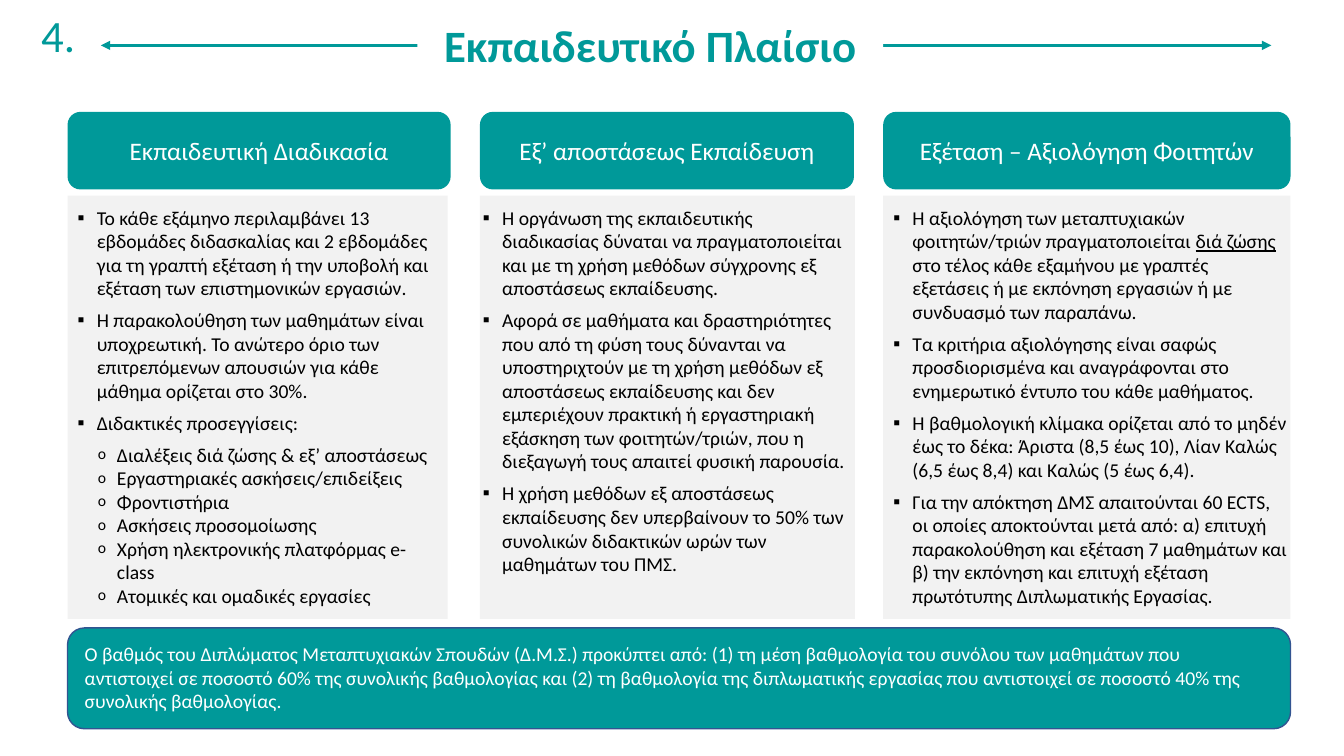
from dataclasses import dataclass

from lxml import etree
from pptx import Presentation
from pptx import util as u
from pptx.dml.color import RGBColor
from pptx.enum import shapes, text
from pptx.oxml import ns


@dataclass(frozen=True)
class Theme:
    font: str = "Calibri"
    teal: str = "009999"
    navy: str = "325491"
    panel: str = "F2F2F2"
    white: str = "FFFFFF"
    black: str = "000000"
    title: int = 32
    header: int = 18
    body: int = 14


THEME = Theme()
HANG = 0.19
PANEL_TOP, PANEL_HEIGHT = 1.94, 4.2
LIST_TOP = 1.99

COLUMNS = [
    dict(
        header="Εκπαιδευτική Διαδικασία",
        left=0.67, header_width=3.8, panel_width=3.77,
        list_left=0.67, list_width=3.69, list_height=4.12,
        points=[
            "Το κάθε εξάμηνο περιλαμβάνει 13 εβδομάδες διδασκαλίας και 2 εβδομάδες για τη γραπτή εξέταση ή την υποβολή και εξέταση των επιστημονικών εργασιών.",
            "Η παρακολούθηση των μαθημάτων είναι υποχρεωτική. Το ανώτερο όριο των επιτρεπόμενων απουσιών για κάθε μάθημα ορίζεται στο 30%.",
            "Διδακτικές προσεγγίσεις:",
        ],
        subpoints=[
            "Διαλέξεις διά ζώσης & εξ’ αποστάσεως",
            "Εργαστηριακές ασκήσεις/επιδείξεις",
            "Φροντιστήρια",
            "Ασκήσεις προσομοίωσης",
            "Χρήση ηλεκτρονικής πλατφόρμας e-class",
            "Ατομικές και ομαδικές εργασίες",
        ],
    ),
    dict(
        header="Εξ’ αποστάσεως Εκπαίδευση",
        left=4.76, header_width=3.71, panel_width=3.72,
        list_left=4.69, list_width=3.85, list_height=3.8,
        points=[
            "Η οργάνωση της εκπαιδευτικής διαδικασίας δύναται να πραγματοποιείται και με τη χρήση μεθόδων σύγχρονης εξ αποστάσεως εκπαίδευσης.",
            "Αφορά σε μαθήματα και δραστηριότητες που από τη φύση τους δύνανται να υποστηριχτούν με τη χρήση μεθόδων εξ αποστάσεως εκπαίδευσης και δεν εμπεριέχουν πρακτική ή εργαστηριακή εξάσκηση των φοιτητών/τριών, που η διεξαγωγή τους απαιτεί φυσική παρουσία.",
            "Η χρήση μεθόδων εξ αποστάσεως εκπαίδευσης δεν υπερβαίνουν το 50% των συνολικών διδακτικών ωρών των μαθημάτων του ΠΜΣ.",
        ],
        subpoints=[],
    ),
    dict(
        header="Εξέταση – Αξιολόγηση Φοιτητών",
        left=8.76, header_width=4.04, panel_width=4.04,
        list_left=8.76, list_width=4.12, list_height=4.12,
        points=[
            ("Η αξιολόγηση των μεταπτυχιακών φοιτητών/τριών πραγματοποιείται ",
             "διά ζώσης",
             " στο τέλος κάθε εξαμήνου με γραπτές εξετάσεις ή με εκπόνηση εργασιών ή με συνδυασμό των παραπάνω."),
            "Τα κριτήρια αξιολόγησης είναι σαφώς προσδιορισμένα και αναγράφονται στο ενημερωτικό έντυπο του κάθε μαθήματος.",
            "Η βαθμολογική κλίμακα ορίζεται από το μηδέν έως το δέκα: Άριστα (8,5 έως 10), Λίαν Καλώς (6,5 έως 8,4) και Καλώς (5 έως 6,4).",
            "Για την απόκτηση ΔΜΣ απαιτούνται 60 ECTS, οι οποίες αποκτούνται μετά από: α) επιτυχή παρακολούθηση και εξέταση 7 μαθημάτων και β) την εκπόνηση και επιτυχή εξέταση πρωτότυπης Διπλωματικής Εργασίας.",
        ],
        subpoints=[],
    ),
]

SUMMARY = "Ο βαθμός του Διπλώματος Μεταπτυχιακών Σπουδών (Δ.Μ.Σ.) προκύπτει από: (1) τη μέση βαθμολογία του συνόλου των μαθημάτων που αντιστοιχεί σε ποσοστό 60% της συνολικής βαθμολογίας και (2) τη βαθμολογία της διπλωματικής εργασίας που αντιστοιχεί σε ποσοστό 40% της συνολικής βαθμολογίας."


def rgb(color):
    return RGBColor.from_string(color)


def set_bullet(para, bullet, indent, bullet_size):
    props = para._p.get_or_add_pPr()
    props.set("marL", str(u.Inches(indent)))
    props.set("indent", str(u.Inches(-HANG if bullet else 0)))
    if not bullet:
        etree.SubElement(props, ns.qn("a:buNone"))
        return
    etree.SubElement(props, ns.qn("a:buSzPct"), val=str(bullet_size * 1000))
    etree.SubElement(props, ns.qn("a:buFont"), typeface=THEME.font)
    etree.SubElement(props, ns.qn("a:buChar"), char=bullet)


def write(box, content, size=THEME.body, color=THEME.black, bold=False, align=text.PP_ALIGN.LEFT,
          bullet=None, indent=0, bullet_size=100, after=0, more=False):
    frame = box.text_frame
    para = frame.add_paragraph() if more else frame.paragraphs[0]
    set_bullet(para, bullet, indent, bullet_size)
    para.alignment = align
    para.space_before = u.Pt(0)
    para.space_after = u.Pt(after)
    pieces = (content,) if isinstance(content, str) else content
    for number, piece in enumerate(pieces):
        span = para.add_run()
        span.text = piece
        span.font.name = THEME.font
        span.font.size = u.Pt(size)
        span.font.bold = bold
        span.font.color.rgb = rgb(color)
        if number == 1:
            span.font.underline = True


def set_frame(box, anchor=text.MSO_ANCHOR.TOP, wrap=True):
    frame = box.text_frame
    frame.word_wrap = wrap
    frame.auto_size = text.MSO_AUTO_SIZE.NONE
    frame.vertical_anchor = anchor
    frame.margin_left = frame.margin_right = u.Inches(0.1)
    frame.margin_top = frame.margin_bottom = u.Inches(0.05)


def place(box, left, top, width, height):
    box.left, box.top = u.Inches(left), u.Inches(top)
    box.width, box.height = u.Inches(width), u.Inches(height)
    set_frame(box)
    box.element.getparent().append(box.element)


def add_block(page, kind, left, top, width, height, fill, line=None):
    block = page.shapes.add_shape(kind, u.Inches(left), u.Inches(top), u.Inches(width), u.Inches(height))
    block.shadow.inherit = False
    block.fill.solid()
    block.fill.fore_color.rgb = rgb(fill)
    if line:
        block.line.color.rgb = rgb(line)
        block.line.width = u.Pt(1)
    else:
        block.line.fill.background()
    return block


def add_double_arrow(page, left, right, y):
    arrow = page.shapes.add_connector(
        shapes.MSO_CONNECTOR.STRAIGHT, u.Inches(left), u.Inches(y), u.Inches(right), u.Inches(y))
    arrow.line.color.rgb = rgb(THEME.teal)
    arrow.line.width = u.Pt(2.25)
    outline = arrow.line._get_or_add_ln()
    for end in ("a:headEnd", "a:tailEnd"):
        etree.SubElement(outline, ns.qn(end), type="triangle")
    etree.SubElement(arrow.element.spPr, ns.qn("a:effectLst"))


def add_heading(page):
    add_double_arrow(page, 1, 12.61, 0.45)
    title = page.shapes.title
    place(title, 4.14, 0.13, 4.62, 0.64)
    title.fill.solid()
    title.fill.fore_color.rgb = rgb(THEME.white)
    write(title, "Εκπαιδευτικό Πλαίσιο", size=THEME.title, color=THEME.teal, bold=True,
          align=text.PP_ALIGN.CENTER)
    number = page.shapes.add_textbox(u.Inches(0.31), u.Inches(0.03), u.Inches(0.54), u.Inches(0.64))
    set_frame(number, wrap=False)
    write(number, "4.", size=THEME.title, color=THEME.teal)


def add_column(page, body, column):
    left = column["left"]
    add_block(page, shapes.MSO_SHAPE.RECTANGLE, left, PANEL_TOP, column["panel_width"], PANEL_HEIGHT, THEME.panel)
    header = add_block(page, shapes.MSO_SHAPE.ROUNDED_RECTANGLE, left, 1.11, column["header_width"], 0.77, THEME.teal)
    set_frame(header, anchor=text.MSO_ANCHOR.MIDDLE)
    write(header, column["header"], size=THEME.header, color=THEME.white, align=text.PP_ALIGN.CENTER)
    place(body, column["list_left"], LIST_TOP, column["list_width"], column["list_height"])
    for number, point in enumerate(column["points"]):
        write(body, point, bullet="▪", indent=HANG, after=6, more=number > 0)
    for point in column["subpoints"]:
        write(body, point, bullet="o", indent=0.39, bullet_size=80, more=True)


def add_summary(page, body):
    add_block(page, shapes.MSO_SHAPE.ROUNDED_RECTANGLE, 0.67, 6.23, 12.13, 1, THEME.teal, line=THEME.navy)
    place(body, 0.74, 6.32, 11.99, 0.81)
    write(body, SUMMARY, color=THEME.white)


def main():
    deck = Presentation()
    deck.slide_width, deck.slide_height = u.Inches(13.33), u.Inches(7.5)
    page = deck.slides.add_slide(deck.slide_layouts.get_by_name("Comparison"))
    *bodies, summary = [box for box in page.placeholders if box.placeholder_format.idx in (1, 2, 3, 4)]
    add_heading(page)
    for body, column in zip(bodies, COLUMNS):
        add_column(page, body, column)
    add_summary(page, summary)
    deck.save("out.pptx")


if __name__ == "__main__":
    main()
